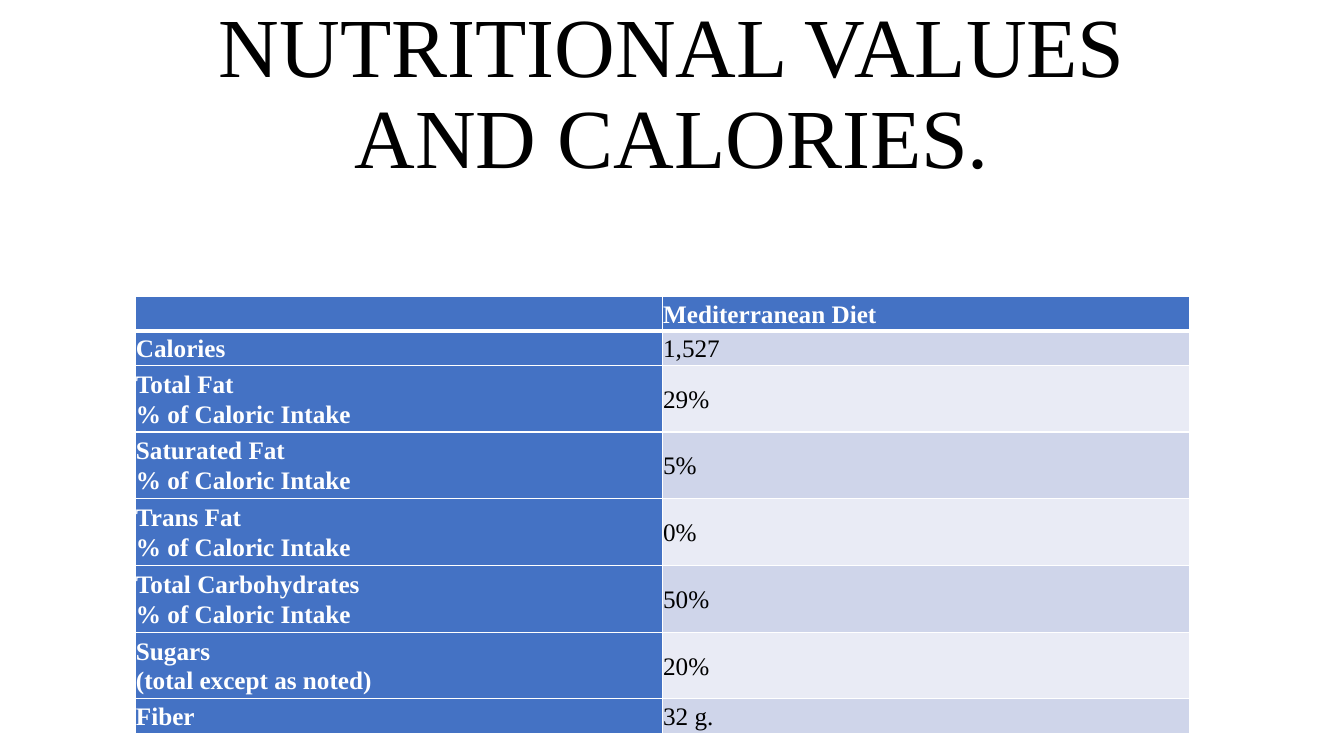
from dataclasses import dataclass

from lxml import etree
from pptx import Presentation
from pptx.dml.color import RGBColor
from pptx.enum.text import MSO_ANCHOR, PP_ALIGN
from pptx.oxml.ns import qn
from pptx.util import Pt

CENTER, LEFT = PP_ALIGN.CENTER, PP_ALIGN.LEFT
MIDDLE, BOTTOM = MSO_ANCHOR.MIDDLE, MSO_ANCHOR.BOTTOM


@dataclass(frozen=True)
class Theme:
    font: str = "Times New Roman"
    ink: str = "000000"
    paper: str = "FFFFFF"
    head: str = "4472C4"
    bands: tuple = ("CFD5EA", "E9EBF5")
    title: float = 60
    body: float = 18
    rule: float = 1
    bold_rule: float = 3
    pad: float = 0.72


THEME = Theme()
SHARE = "% of Caloric Intake"
ROWS = [
    ("", "Mediterranean Diet"),
    ("Calories", "1,527"),
    (f"Total Fat\n{SHARE}", "29%"),
    (f"Saturated Fat\n{SHARE}", "5%"),
    (f"Trans Fat\n{SHARE}", "0%"),
    (f"Total Carbohydrates\n{SHARE}", "50%"),
    ("Sugars\n(total except as noted)", "20%"),
    ("Fiber", "32 g."),
]


def put_text(frame, text, size=THEME.body, color=THEME.ink, bold=False,
             align=LEFT, spacing=1.07):
    para = frame.paragraphs[0]
    para.text = text
    para.alignment = align
    para.line_spacing = spacing
    for run in para.runs:
        run.font.name = THEME.font
        run.font.size = Pt(size)
        run.font.bold = bold
        run.font.color.rgb = RGBColor.from_string(color)


def add_rule(cell, side, width):
    props = cell._tc.get_or_add_tcPr()
    line = etree.SubElement(props, qn(f"a:ln{side}"), w=str(Pt(width)))
    fill = etree.SubElement(line, qn("a:solidFill"))
    etree.SubElement(fill, qn("a:srgbClr"), val=THEME.paper)


def add_title(slide, left, top, width, height):
    box = slide.shapes.add_textbox(Pt(left), Pt(top), Pt(width), Pt(height))
    frame = box.text_frame
    frame.word_wrap = True
    frame.vertical_anchor = BOTTOM
    put_text(frame, "NUTRITIONAL VALUES AND CALORIES.", size=THEME.title,
             align=CENTER, spacing=0.9)


def fill_cell(cell, text, row, col):
    head = row == 0 or col == 0
    heavy = {(0, "B"), (1, "T")}
    for side in "LRTB":
        add_rule(cell, side,
                 THEME.bold_rule if (row, side) in heavy else THEME.rule)
    cell.fill.solid()
    color = THEME.head if head else THEME.bands[(row - 1) % 2]
    cell.fill.fore_color.rgb = RGBColor.from_string(color)
    cell.vertical_anchor = MIDDLE
    cell.margin_left = cell.margin_right = Pt(THEME.pad)
    cell.margin_top = cell.margin_bottom = Pt(THEME.pad if text else 0)
    if text:
        put_text(cell.text_frame, text, bold=head,
                 color=THEME.paper if head else THEME.ink)


def add_facts(slide, left, top, width, height):
    count = len(ROWS[0])
    table = slide.shapes.add_table(len(ROWS), count, Pt(left), Pt(top),
                                   Pt(width), Pt(height)).table
    lines = [max(text.count("\n") + 1 for text in row) for row in ROWS]
    for col in table.columns:
        col.width = Pt(width / count)
    for r, texts in enumerate(ROWS):
        table.rows[r].height = Pt(height * lines[r] / sum(lines))
        for c, text in enumerate(texts):
            fill_cell(table.cell(r, c), text, r, c)


def main():
    deck = Presentation()
    deck.slide_width, deck.slide_height = Pt(960), Pt(540)
    slide = deck.slides.add_slide(deck.slide_layouts[6])
    add_title(slide, 120, 0, 720, 136.8)
    add_facts(slide, 96.4, 211.8, 753.2, 287)
    deck.save("out.pptx")


if __name__ == "__main__":
    main()
